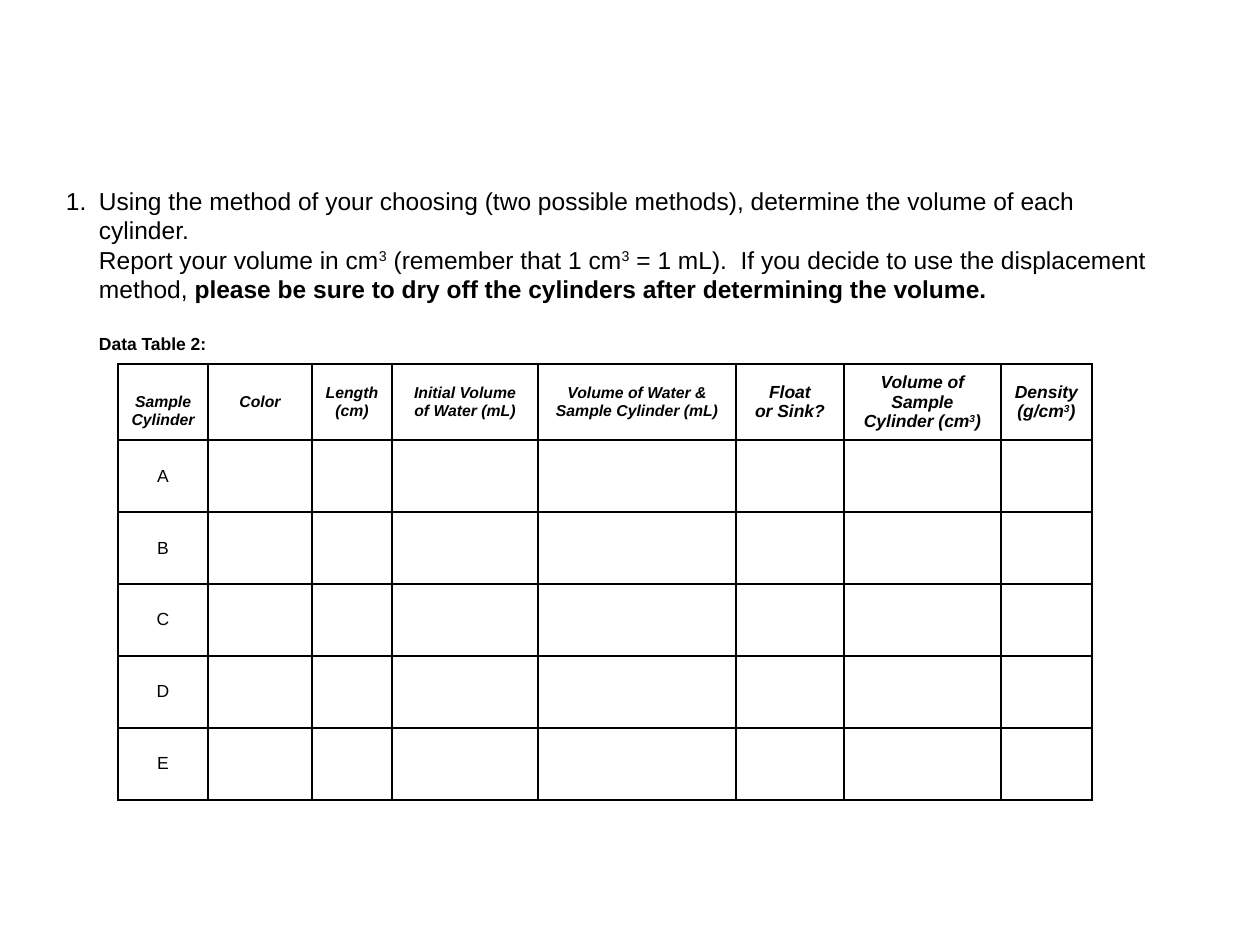
from dataclasses import dataclass

from lxml import etree
from pptx import Presentation
from pptx import util as u
from pptx.dml.color import RGBColor
from pptx.enum import text
from pptx.oxml import ns

PX = u.Inches(1) // 126


@dataclass(frozen=True)
class Theme:
    font: str = "Arial"
    ink: str = "000000"
    body: int = 14
    small: int = 10
    tiny: int = 9
    line_pitch: float = 16.8
    border: int = 1


THEME = Theme()

# A paragraph is a list of spans; a span is (wording, format).
CUBE = ("3", {"raised": True})
STEP = [
    [("Using the method of your choosing (two possible methods), "
      "determine the volume of each cylinder.", {})],
    [("Report your volume in cm", {}), CUBE, (" (remember that 1 cm", {}), CUBE,
     (" = 1 mL).  If you decide to use the displacement", {})],
    [("method, ", {}),
     ("please be sure to dry off the cylinders after determining the volume.", {"bold": True})],
]
CAPTION = [("Data Table 2:", {"bold": True})]

# Column width in px, type size, heading paragraphs.
COLUMNS = [
    (90, THEME.tiny, [[("Sample", {})], [("Cylinder", {})]]),
    (104, THEME.tiny, [[("Color", {})]]),
    (80, THEME.tiny, [[("Length", {})], [("(cm)", {})]]),
    (146, THEME.tiny, [[("Initial Volume", {})], [("of Water (mL)", {})]]),
    (198, THEME.tiny, [[("Volume of Water & Sample Cylinder (mL)", {})]]),
    (108, THEME.small, [[("Float", {})], [("or Sink?", {})]]),
    (157, THEME.small, [[("Volume of Sample Cylinder (cm", {}), CUBE, (")", {})]]),
    (91, THEME.small, [[("Density", {})], [("(g/cm", {}), CUBE, (")", {})]]),
]
SAMPLES = ["A", "B", "C", "D", "E"]

STEP_BOX = (53, 163, 1142, 176)
STEP_INSETS = (13, 23, 36, 0)
STEP_INDENT = 33
TABLE_LEFT, TABLE_TOP = 118, 364
HEADING_HEIGHT, SAMPLE_HEIGHT = 76, 72
LOW_HEADING_INSET = 24


def px(*lengths):
    return [length * PX for length in lengths]


def add_span(para, wording, size, bold=False, italic=False, raised=False):
    span = para.add_run()
    span.text = wording
    font = span.font
    font.name, font.size = THEME.font, u.Pt(size)
    font.bold, font.italic = bold, italic
    font.color.rgb = RGBColor.from_string(THEME.ink)
    if raised:
        span._r.get_or_add_rPr().set("baseline", "30000")


def write(frame, paragraphs, align=text.PP_ALIGN.LEFT, **style):
    """Fill a text frame and return its paragraphs."""
    paras = []
    for spans in paragraphs:
        para = frame.add_paragraph() if paras else frame.paragraphs[0]
        para.alignment = align
        for wording, extra in spans:
            add_span(para, wording, **{**style, **extra})
        paras.append(para)
    return paras


def indent(para, left, number=False):
    props = para._p.get_or_add_pPr()
    props.set("marL", str(left * PX))
    props.set("indent", str(-left * PX if number else 0))
    if number:
        etree.SubElement(props, ns.qn("a:buFont"), typeface=THEME.font)
        etree.SubElement(props, ns.qn("a:buAutoNum"), type="arabicPeriod")


def add_step(page):
    frame = page.shapes.add_textbox(*px(*STEP_BOX)).text_frame
    frame.word_wrap = True
    frame.vertical_anchor = text.MSO_ANCHOR.TOP
    (frame.margin_left, frame.margin_top,
     frame.margin_right, frame.margin_bottom) = px(*STEP_INSETS)
    paras = write(frame, STEP, size=THEME.body)
    for order, para in enumerate(paras):
        para.line_spacing = u.Pt(THEME.line_pitch)
        indent(para, STEP_INDENT, number=order == 0)
    caption = frame.add_paragraph()
    caption.space_before = u.Pt(THEME.line_pitch)
    indent(caption, STEP_INDENT)
    for wording, extra in CAPTION:
        add_span(caption, wording, THEME.small, **extra)


def rule_cell(cell):
    """Give a cell plain borders on all sides and no fill."""
    props = cell._tc.get_or_add_tcPr()
    for side in ("a:lnL", "a:lnR", "a:lnT", "a:lnB"):
        line = etree.SubElement(props, ns.qn(side), w=str(u.Pt(THEME.border)))
        fill = etree.SubElement(line, ns.qn("a:solidFill"))
        etree.SubElement(fill, ns.qn("a:srgbClr"), val=THEME.ink)
    cell.fill.background()
    cell.vertical_anchor = text.MSO_ANCHOR.MIDDLE


def add_data_table(page):
    width = sum(column[0] for column in COLUMNS)
    height = HEADING_HEIGHT + SAMPLE_HEIGHT * len(SAMPLES)
    table = page.shapes.add_table(
        len(SAMPLES) + 1, len(COLUMNS), *px(TABLE_LEFT, TABLE_TOP, width, height)).table
    table.first_row = table.horz_banding = False
    for row in table.rows:
        row.height = SAMPLE_HEIGHT * PX
    table.rows[0].height = HEADING_HEIGHT * PX
    for cell in table.iter_cells():
        rule_cell(cell)
    center = text.PP_ALIGN.CENTER
    for index, (column_width, size, heading) in enumerate(COLUMNS):
        table.columns[index].width = column_width * PX
        write(table.cell(0, index).text_frame, heading, center,
              size=size, bold=True, italic=True)
    table.cell(0, 0).margin_top = LOW_HEADING_INSET * PX
    for index, sample in enumerate(SAMPLES, start=1):
        write(table.cell(index, 0).text_frame, [[(sample, {})]], center, size=THEME.small)


def main():
    deck = Presentation()
    deck.slide_width, deck.slide_height = px(1260, 945)
    page = deck.slides.add_slide(deck.slide_layouts[6])
    add_step(page)
    add_data_table(page)
    deck.save("out.pptx")


if __name__ == "__main__":
    main()
